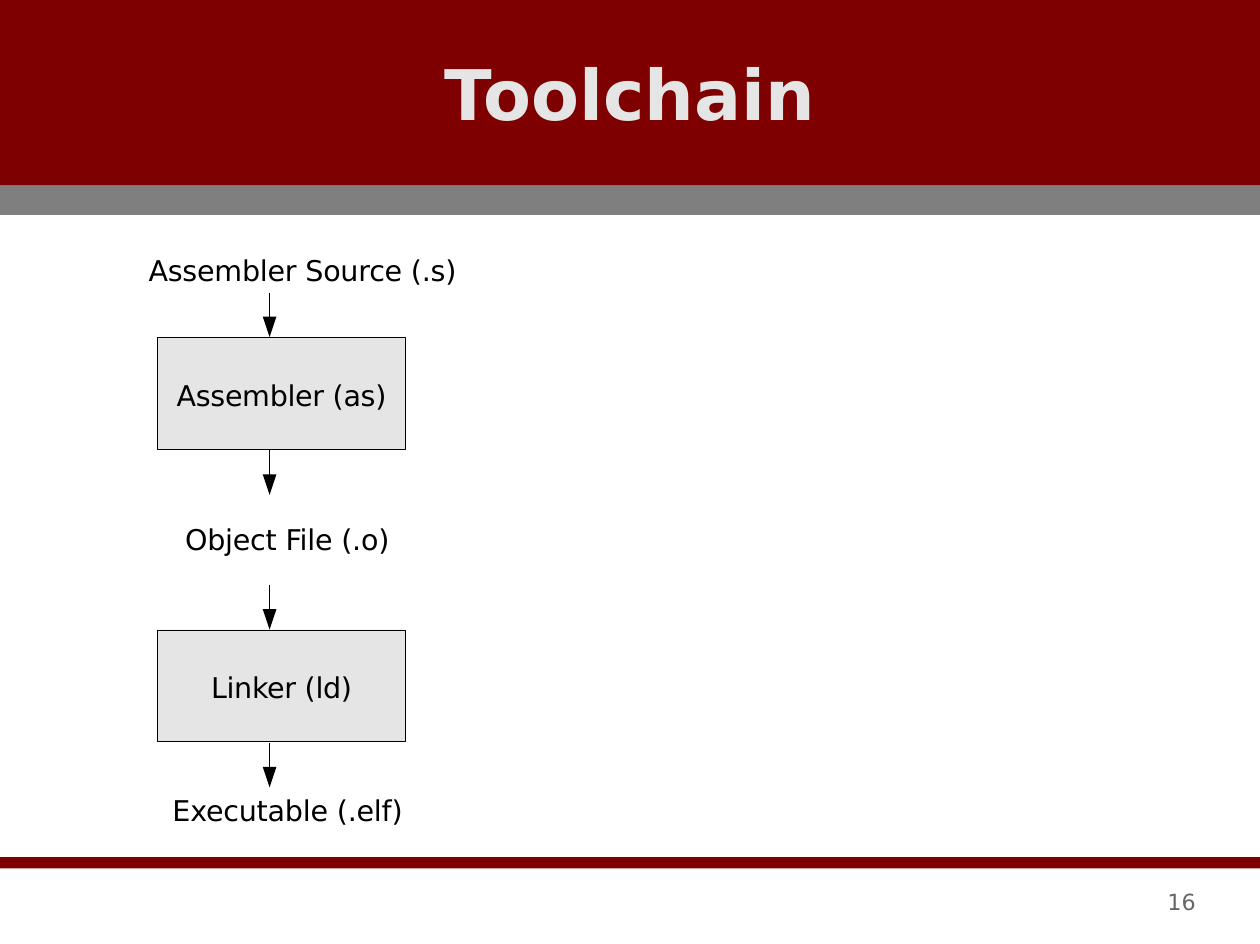
from lxml.etree import SubElement
from pptx import Presentation
from pptx.dml.color import RGBColor
from pptx.enum.shapes import MSO_CONNECTOR, MSO_SHAPE
from pptx.enum.text import MSO_ANCHOR, PP_ALIGN
from pptx.oxml.ns import qn
from pptx.util import Pt

PX = 9144  # 100 px to the inch
WIDTH, HEIGHT = 1103, 826
RED = RGBColor(0x7F, 0x00, 0x00)
GRAY = RGBColor(0x7F, 0x7F, 0x7F)
PALE = RGBColor(0xE5, 0xE5, 0xE5)
DIM = RGBColor(0x66, 0x66, 0x66)
BLACK = RGBColor(0x00, 0x00, 0x00)
FONT = "DejaVu Sans"


def px(*nums):
    return [num * PX for num in nums]


def write(shape, text, size=18, color=BLACK, bold=False, align=PP_ALIGN.LEFT,
          anchor=MSO_ANCHOR.TOP, track=0):
    """Fill the shape with one line; track is letter spacing in 1/100 pt."""
    frame = shape.text_frame
    frame.margin_left = frame.margin_right = 0
    frame.margin_top = frame.margin_bottom = 0
    frame.word_wrap = False
    frame.vertical_anchor = anchor
    para = frame.paragraphs[0]
    para.alignment = align
    run = para.add_run()
    run.text = text
    font = run.font
    font.name, font.size, font.bold = FONT, Pt(size), bold
    font.color.rgb = color
    if track:
        font._element.set("spc", str(track))


def add_solid(slide, kind, box, fill):
    shape = slide.shapes.add_shape(kind, *px(*box))
    shape.shadow.inherit = False
    shape.fill.solid()
    shape.fill.fore_color.rgb = fill
    shape.line.fill.background()
    return shape


def add_label(slide, text, box, **style):
    write(slide.shapes.add_textbox(*px(*box)), text, **style)


def add_step(slide, text, top):
    step = add_solid(slide, MSO_SHAPE.RECTANGLE, (138, top, 217, 98), PALE)
    step.line.color.rgb = BLACK
    step.line.width = Pt(0.25)
    write(step, text, align=PP_ALIGN.CENTER, anchor=MSO_ANCHOR.MIDDLE, track=-20)
    step.text_frame.margin_top = 3 * PX


def add_arrow(slide, top):
    """Draw a hairline stem with a large head pointing down."""
    stem = slide.shapes.add_connector(
        MSO_CONNECTOR.STRAIGHT, *px(236, top, 236, top + 25))
    stem.line.color.rgb = BLACK
    stem.line.width = Pt(0.25)
    SubElement(stem.element.spPr, qn("a:effectLst"))
    add_solid(slide, MSO_SHAPE.FLOWCHART_MERGE, (230, top + 21, 12, 18), BLACK)


def add_title(slide, text):
    title = slide.shapes.title
    title.left, title.top, title.width, title.height = px(384, 44, 335, 72)
    write(title, text, size=44, color=PALE, bold=True, align=PP_ALIGN.CENTER)
    slide.shapes.element.append(title.element)  # in front of the bands


def main():
    deck = Presentation()
    deck.slide_width, deck.slide_height = px(WIDTH, HEIGHT)
    slide = deck.slides.add_slide(deck.slide_layouts[5])

    for top, high, fill in ((162, 26, GRAY), (0, 162, RED), (750, 10, RED)):
        add_solid(slide, MSO_SHAPE.RECTANGLE, (0, top, WIDTH, high), fill)
    add_title(slide, "Toolchain")

    for text, top in (("Assembler (as)", 295), ("Linker (ld)", 551)):
        add_step(slide, text, top)
        add_arrow(slide, top - 39)
        add_arrow(slide, top + 99)

    for text, left, top, wide in (
        ("Assembler Source (.s)", 130, 221, 271),
        ("Object File (.o)", 162, 457, 182),
        ("Executable (.elf)", 151, 694, 203),
    ):
        add_label(slide, text, (left, top, wide, 30), track=-15)
    add_label(slide, "16", (1022, 777, 38, 24), size=14, color=DIM)

    deck.save("out.pptx")


if __name__ == "__main__":
    main()
